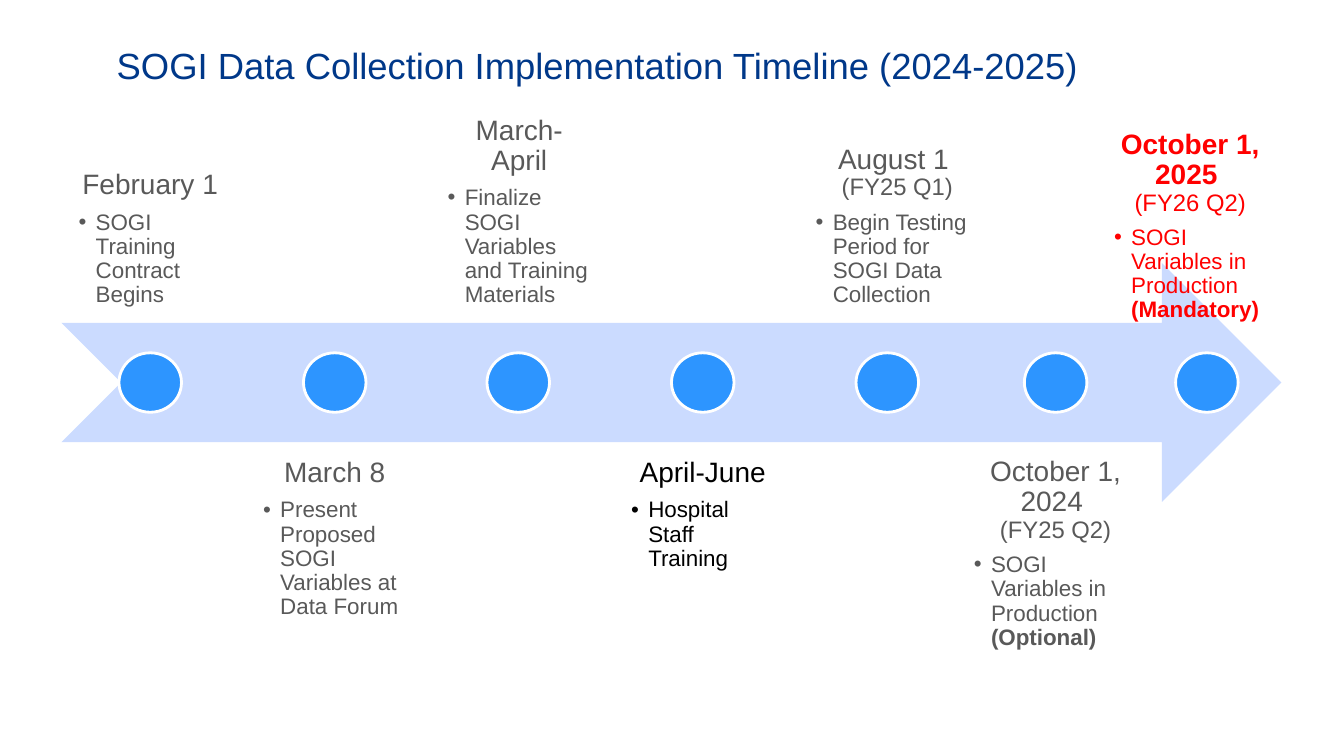
from lxml import etree
from pptx import Presentation
from pptx.dml.color import RGBColor
from pptx.enum.shapes import MSO_SHAPE
from pptx.enum.text import MSO_ANCHOR, PP_ALIGN
from pptx.oxml.ns import qn
from pptx.util import Pt

PX = 9144
NAVY = RGBColor(0x00, 0x38, 0x89)
PALE_BLUE = RGBColor(0xCB, 0xDB, 0xFF)
BLUE = RGBColor(0x2D, 0x95, 0xFF)
GREY = RGBColor(0x59, 0x59, 0x59)
BLACK = RGBColor(0x00, 0x00, 0x00)
RED = RGBColor(0xFF, 0x00, 0x00)
WHITE = RGBColor(0xFF, 0xFF, 0xFF)
ARROW = MSO_SHAPE.NOTCHED_RIGHT_ARROW
OVAL = MSO_SHAPE.OVAL
TOP, BOTTOM = MSO_ANCHOR.TOP, MSO_ANCHOR.BOTTOM
CENTER, LEFT = PP_ALIGN.CENTER, PP_ALIGN.LEFT

TEXT_HEIGHT = 237
INSET = 16
INDENT = 17
DOT_TOP, DOT_WIDTH, DOT_HEIGHT = 350, 62, 59

MILESTONES = [
    ((62, 84, 174), BOTTOM, 118, GREY, "February 1", "",
     "SOGI Training Contract Begins", ""),
    ((245, 439, 174), TOP, 301, GREY, "March 8", "",
     "Present Proposed SOGI Variables at Data Forum", ""),
    ((428, 84, 174), BOTTOM, 483, GREY, "March-April", "",
     "Finalize SOGI Variables and Training Materials", ""),
    ((610, 439, 174), TOP, 666, BLACK, "April-June", "",
     "Hospital Staff Training", ""),
    ((793, 84, 194), BOTTOM, 849, GREY, "August 1 ", "(FY25 Q1)",
     "Begin Testing Period for SOGI Data Collection", ""),
    ((950, 424, 194), BOTTOM, 1016, GREY, "October 1, 2024 ", "(FY25 Q2)",
     "SOGI Variables in Production ", "(Optional)"),
    ((1089, 113, 183), TOP, 1166, RED, "October 1, 2025 ", "(FY26 Q2)",
     "SOGI Variables in Production ", "(Mandatory)"),
]

presentation = Presentation()
presentation.slide_width = 1333 * PX
presentation.slide_height = 750 * PX
slide = presentation.slides.add_slide(presentation.slide_layouts[6])


def add_run(paragraph, text, size, color, bold=False):
    run = paragraph.add_run()
    run.text = text
    formats = {"name": "Arial", "size": Pt(size), "bold": bold}
    for name, value in formats.items():
        setattr(run.font, name, value)
    run.font.color.rgb = color


def add_shape(preset, left, top, width, height, color):
    shape = slide.shapes.add_shape(
        preset, left * PX, top * PX, width * PX, height * PX)
    shape.shadow.inherit = False
    shape.fill.solid()
    shape.fill.fore_color.rgb = color
    shape.line.fill.background()
    return shape


title = slide.shapes.add_textbox(106 * PX, 38 * PX, 1150 * PX, 93 * PX)
title.text_frame.word_wrap = True
add_run(title.text_frame.paragraphs[0],
        "SOGI Data Collection Implementation Timeline (2024-2025)", 26, NAVY)

add_shape(ARROW, 61, 261, 1210, 237, PALE_BLUE)

for box, anchor, dot_left, color, date, quarter, task, status in MILESTONES:
    left, top, width = box
    dot = add_shape(OVAL, dot_left, DOT_TOP, DOT_WIDTH, DOT_HEIGHT, BLUE)
    dot.line.color.rgb = WHITE
    dot.line.width = Pt(2)

    label = slide.shapes.add_textbox(
        left * PX, top * PX, width * PX, TEXT_HEIGHT * PX)
    frame = label.text_frame
    frame.word_wrap = True
    frame.vertical_anchor = anchor
    for side in ("left", "top", "right", "bottom"):
        setattr(frame, f"margin_{side}", INSET * PX)

    heading = frame.paragraphs[0]
    add_run(heading, date, 20, color, bold=color == RED)
    headings = [heading]
    if quarter:
        headings.append(frame.add_paragraph())
        add_run(headings[-1], quarter, 17, color)
    for paragraph in headings:
        paragraph.alignment = CENTER
        paragraph.line_spacing = 0.9

    bullet = frame.add_paragraph()
    properties = bullet._p.get_or_add_pPr()
    properties.set("marL", str(INDENT * PX))
    properties.set("indent", str(-INDENT * PX))
    bullet_color = etree.SubElement(properties, qn("a:buClr"))
    etree.SubElement(bullet_color, qn("a:srgbClr"), val=str(color))
    etree.SubElement(properties, qn("a:buFont"), typeface="Arial")
    etree.SubElement(properties, qn("a:buChar"), char="•")
    formats = {"level": 1, "alignment": LEFT, "line_spacing": 0.9,
               "space_before": Pt(7)}
    for name, value in formats.items():
        setattr(bullet, name, value)
    add_run(bullet, task, 16, color)
    if status:
        add_run(bullet, status, 16, color, bold=True)

presentation.save("out.pptx")
